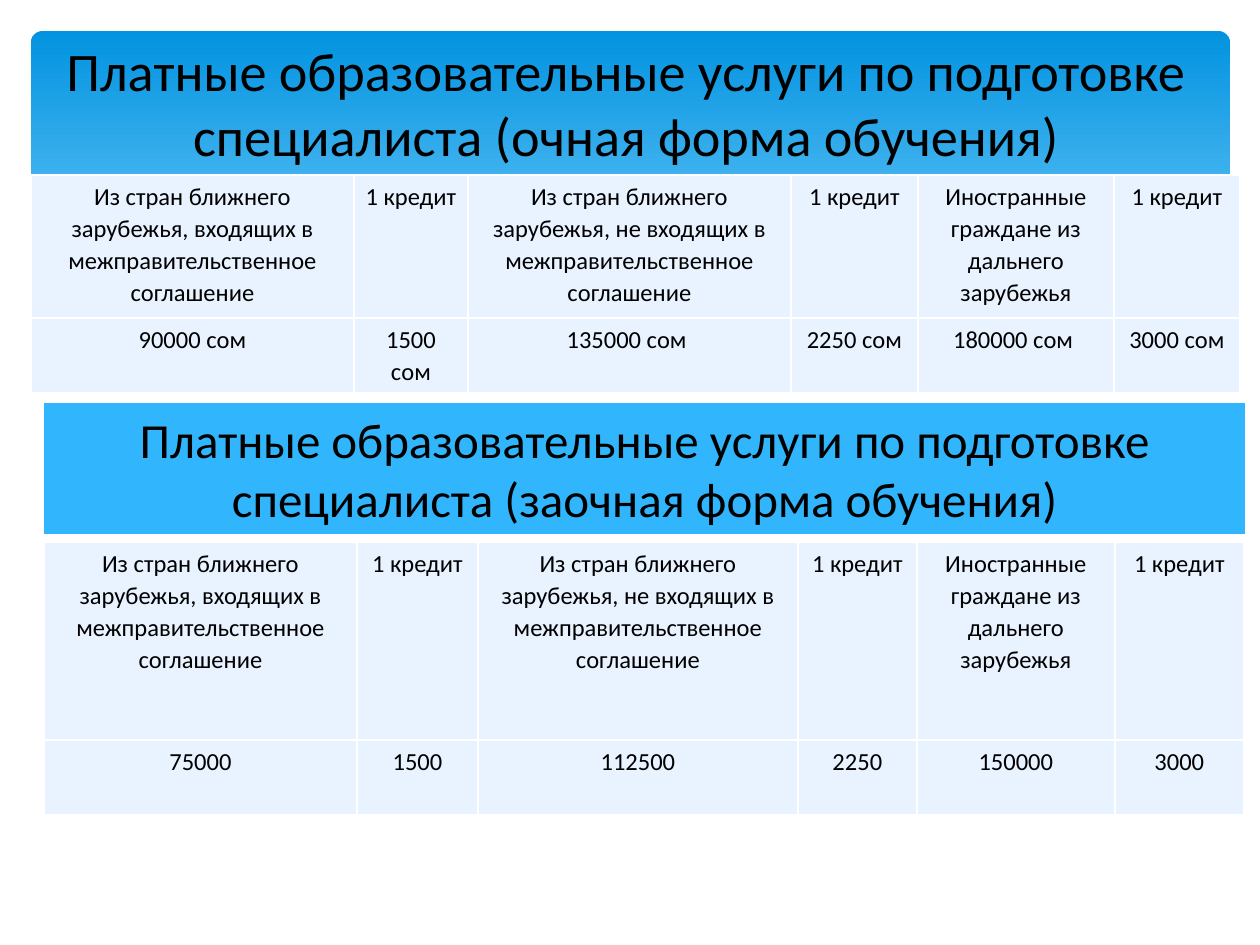
from lxml import etree
from pptx import Presentation
from pptx.dml.color import RGBColor
from pptx.enum.shapes import MSO_SHAPE
from pptx.enum.text import MSO_ANCHOR, MSO_AUTO_SIZE, PP_ALIGN
from pptx.oxml.ns import qn
from pptx.util import Emu, Pt

ROUNDED, RECTANGLE = MSO_SHAPE.ROUNDED_RECTANGLE, MSO_SHAPE.RECTANGLE
MIDDLE, CENTER, NO_AUTOFIT = MSO_ANCHOR.MIDDLE, PP_ALIGN.CENTER, MSO_AUTO_SIZE.NONE
PX = 914400 / 126
HEADING = "Платные образовательные услуги по подготовке специалиста ({} форма обучения)"
CELL_FILL, BORDER = "E8F3FF", "FFFFFF"


def px(*lengths):
    return [Emu(round(length * PX)) for length in lengths]


def write(frame, text, size, spacing=None, color="000000"):
    frame.word_wrap = True
    paragraph = frame.paragraphs[0]
    paragraph.alignment = CENTER
    paragraph.line_spacing = spacing
    run = paragraph.add_run()
    run.text = text
    run.font.size = Pt(size)
    run.font.name = "Calibri"
    run.font.color.rgb = RGBColor.from_string(color)


prs = Presentation()
prs.slide_width, prs.slide_height = px(1260, 945)
slide = prs.slides.add_slide(prs.slide_layouts[5])
shapes = slide.shapes
title = shapes.title

# Gradient panel behind the title
panel = shapes.add_shape(ROUNDED, *px(31, 31, 1199, 340))
panel.adjustments[0] = 0.034
panel.shadow.inherit = False
panel.line.fill.background()
panel.fill.gradient()
panel.fill.gradient_angle = 270
for stop, (position, color) in zip(panel.fill.gradient_stops, [(0, "0293E0"), (0.9, "83D3FE")]):
    stop.position = position
    stop.color.rgb = RGBColor.from_string(color)

# Fee tables: full-time above, part-time below
headers = [
    "Из стран ближнего зарубежья, входящих в межправительственное соглашение",
    "1 кредит",
    "Из стран ближнего зарубежья, не входящих в межправительственное соглашение",
    "1 кредит",
    "Иностранные граждане из дальнего зарубежья",
    "1 кредит",
]
full_time = ["90000 сом", "1500 сом", "135000 сом ", "2250 сом", "180000 сом ", "3000 сом"]
part_time = ["75000", "1500", "112500", "2250", "150000", "3000"]
fee_tables = [
    (31, 175, [323, 114, 323, 127, 196, 126], [143, 75], full_time),
    (44, 542, [313, 121, 320, 119, 198, 129], [198, 75], part_time),
]
for left, top, widths, heights, fees in fee_tables:
    fee_table = shapes.add_table(
        2, len(headers), *px(left, top, sum(widths), sum(heights))).table
    fee_table.first_row = fee_table.horz_banding = False
    for column, width in zip(fee_table.columns, px(*widths)):
        column.width = width
    for row, height, texts in zip(fee_table.rows, px(*heights), [headers, fees]):
        row.height = height
        for cell, text in zip(row.cells, texts):
            cell.margin_left, cell.margin_right = px(10, 10)
            cell.margin_top, cell.margin_bottom = px(5, 5)
            write(cell.text_frame, text, 14, spacing=1.07)
            # Borders come before the fill in the cell properties
            properties = cell._tc.get_or_add_tcPr()
            for side in ("a:lnL", "a:lnR", "a:lnT", "a:lnB"):
                line = etree.SubElement(properties, qn(side), w=str(Pt(1)))
                solid = etree.SubElement(line, qn("a:solidFill"))
                etree.SubElement(solid, qn("a:srgbClr"), val=BORDER)
            cell.fill.solid()
            cell.fill.fore_color.rgb = RGBColor.from_string(CELL_FILL)

# Full-time heading, in front of the panel
title.left, title.top, title.width, title.height = px(25, 16, 1201, 173)
write(title.text_frame, HEADING.format("очная"), 31)
title.text_frame.auto_size = NO_AUTOFIT
title.text_frame.vertical_anchor = MIDDLE
panel._element.addnext(title._element)

# Part-time heading
part_time_heading = shapes.add_shape(RECTANGLE, *px(44, 403, 1201, 131))
part_time_heading.shadow.inherit = False
part_time_heading.line.fill.background()
part_time_heading.fill.solid()
part_time_heading.fill.fore_color.rgb = RGBColor.from_string("31B6FD")
write(part_time_heading.text_frame, HEADING.format("заочная"), 28)
part_time_heading.text_frame.vertical_anchor = MIDDLE

prs.save("out.pptx")
